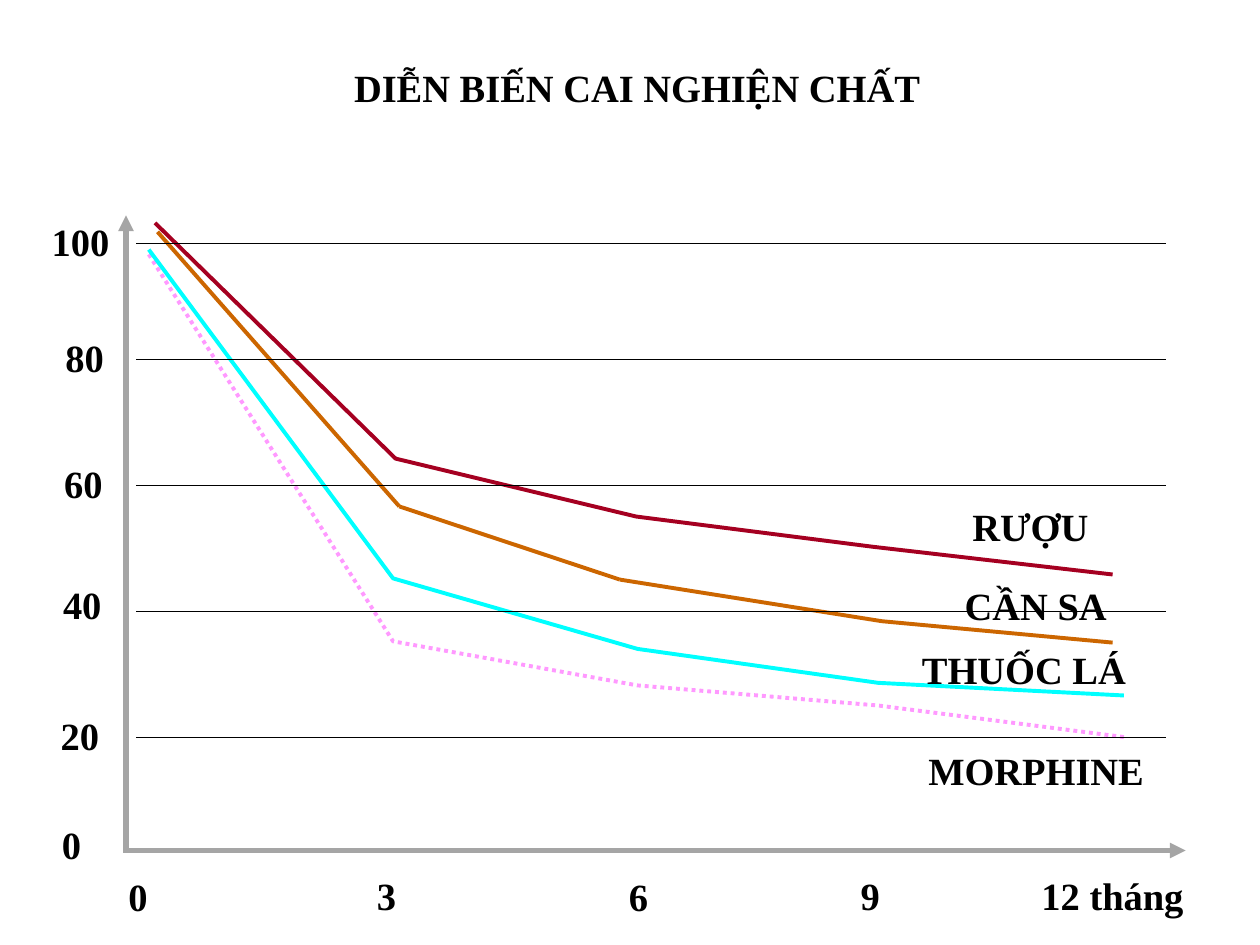
import itertools

import pptx
import pptx.dml.color
import pptx.enum.dml
import pptx.enum.shapes
import pptx.enum.text
import pptx.oxml
import pptx.oxml.ns
import pptx.util

Pt = pptx.util.Pt
ALIGN = pptx.enum.text.PP_ALIGN
DOTTED = pptx.enum.dml.MSO_LINE.ROUND_DOT

BLACK, GREY = "000000", "A5A5A5"
PINK, CYAN, RED, ORANGE = "FF99FF", "00FFFF", "A50021", "CC6600"


def color(hex_string):
    return pptx.dml.color.RGBColor.from_string(hex_string)


class SlideBuilder:
    font_name = "Times New Roman"
    font_size = 22

    def __init__(self, slide):
        self.slide = slide

    def format_text(self, shape, text, align):
        shape.text_frame.text = text
        paragraph = shape.text_frame.paragraphs[0]
        paragraph.alignment = align
        font = paragraph.runs[0].font
        font.name, font.size, font.bold = self.font_name, Pt(self.font_size), True
        font.color.rgb = color(BLACK)
        return paragraph

    def format_line(self, line, hex_string, width, dash=None):
        line.color.rgb = color(hex_string)
        line.width = Pt(width)
        if dash is not None:
            line.dash_style = dash

    def title(self, text, left, top, width, height):
        shape = self.slide.shapes.title
        shape.left, shape.top, shape.width, shape.height = map(Pt, (left, top, width, height))
        shape.text_frame.auto_size = pptx.enum.text.MSO_AUTO_SIZE.NONE
        shape.text_frame.vertical_anchor = pptx.enum.text.MSO_ANCHOR.MIDDLE
        self.format_text(shape, text, ALIGN.LEFT).line_spacing = 0.9

    def text_box(self, text, left, top, width, height, align, wrap):
        shape = self.slide.shapes.add_textbox(*map(Pt, (left, top, width, height)))
        frame = shape.text_frame
        frame.word_wrap = wrap
        frame.auto_size = pptx.enum.text.MSO_AUTO_SIZE.SHAPE_TO_FIT_TEXT
        self.format_text(shape, text, align)
        return frame

    def axis_label(self, text, left, top, width):
        frame = self.text_box(text, left, top, width, 26.6, ALIGN.CENTER, False)
        frame.margin_left = frame.margin_right = frame.margin_top = frame.margin_bottom = 0

    def curve(self, points, hex_string, dash=None):
        start, *others = [(Pt(x), Pt(y)) for x, y in points]
        builder = self.slide.shapes.build_freeform(*start)
        builder.add_line_segments(others, close=False)
        shape = builder.convert_to_shape()
        shape.shadow.inherit = False
        shape.fill.background()
        self.format_line(shape.line, hex_string, 2.25, dash)

    def line(self, start, end, hex_string, width, dash=None, arrow=None):
        connector = self.slide.shapes.add_connector(
            pptx.enum.shapes.MSO_CONNECTOR.STRAIGHT, *map(Pt, (*start, *end)))
        self.format_line(connector.line, hex_string, width, dash)
        properties = connector._element.spPr
        if arrow:
            outline = properties.find(pptx.oxml.ns.qn("a:ln"))
            outline.append(pptx.oxml.parse_xml(
                f'<a:{arrow} {pptx.oxml.ns.nsdecls("a")} type="triangle"/>'))
        properties.append(pptx.oxml.parse_xml(f'<a:effectLst {pptx.oxml.ns.nsdecls("a")}/>'))


def main():
    presentation = pptx.Presentation()
    presentation.slide_width, presentation.slide_height = Pt(720), Pt(540)
    builder = SlideBuilder(presentation.slides.add_slide(presentation.slide_layouts[5]))

    builder.title("DIỄN BIẾN CAI NGHIỆN CHẤT", 195.1, 18, 340.6, 67)

    # Curves
    months = (85, 224.6, 364.3, 501.8, 642.2)
    morphine = (145.4, 366.5, 391.7, 403.2, 421.2)
    tobacco = (142.6, 330.5, 370.8, 390.2, 397.4)
    alcohol = [(88.6, 127.4), (226.1, 262.1), (363.6, 295.2), (499, 312.5), (635.8, 328.3)]
    cannabis = [(90, 132.5), (228.2, 289.4), (354.2, 331.2), (504, 355), (635.8, 367.2)]
    builder.curve(zip(months, morphine), PINK, DOTTED)
    builder.curve(zip(months, tobacco), CYAN)
    builder.curve(alcohol, RED)
    for start, end in itertools.pairwise(cannabis):
        builder.line(start, end, ORANGE, 2.25)

    # Grid and axes
    for y in (139, 205.2, 277.2, 349.2, 421.2):
        builder.line((77.8, y), (666, y), BLACK, 0.25, DOTTED)
    builder.line((72, 123.1), (72, 487.4), GREY, 3, arrow="headEnd")
    builder.line((72, 486), (677.5, 486), GREY, 3, arrow="tailEnd")

    # Axis labels
    for text, left, top, width in (
        ("100", 29.5, 124.6, 33), ("80", 37.4, 190.8, 22), ("60", 36.7, 262.8, 22),
        ("40", 36, 331.9, 22), ("20", 34.6, 406.8, 22), ("0", 35.3, 469.4, 11),
        ("0", 73.4, 499, 11), ("3", 215.3, 498.2, 11), ("6", 359.3, 499, 11),
        ("9", 491.8, 498.2, 11), ("12 tháng", 594.7, 498.2, 82),
    ):
        builder.axis_label(text, left, top, width)

    # Curve names
    for text, left, top, width, align in (
        ("RƯỢU", 548.6, 283.7, 91.4, ALIGN.LEFT),
        ("CẦN SA", 540.7, 329, 102.2, ALIGN.CENTER),
        ("THUỐC LÁ", 519.8, 365.8, 146.2, ALIGN.LEFT),
        ("MORPHINE", 523.4, 423.4, 148.3, ALIGN.LEFT),
    ):
        builder.text_box(text, left, top, width, 33.8, align, True)

    presentation.save("out.pptx")


if __name__ == "__main__":
    main()
